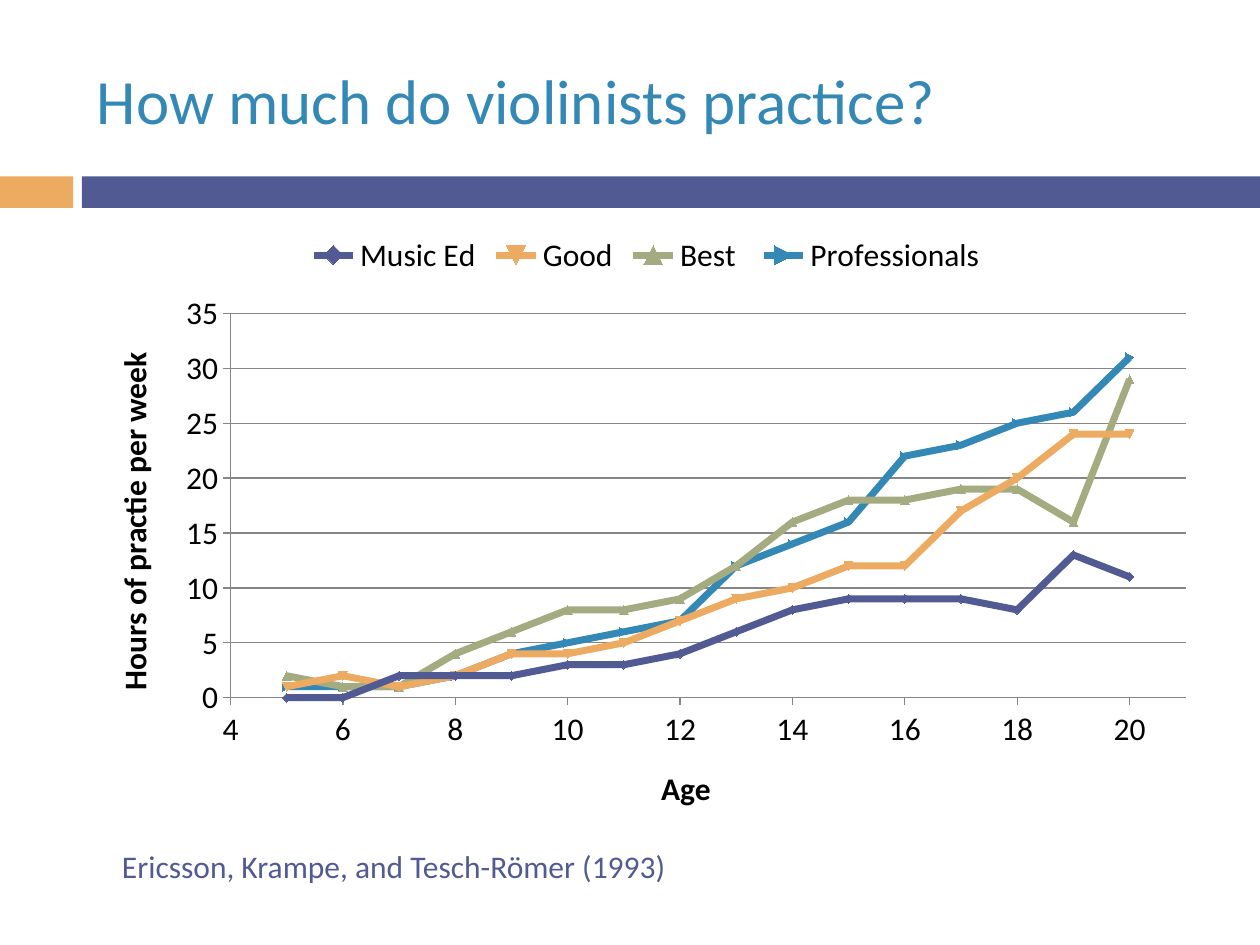
"""Build a slide charting weekly practice hours of violinists by age."""
from lxml import etree
from pptx import Presentation
from pptx.chart.data import XyChartData
from pptx.dml.color import RGBColor
from pptx.enum.chart import XL_CHART_TYPE, XL_LEGEND_POSITION, XL_MARKER_STYLE, XL_TICK_MARK
from pptx.enum.shapes import MSO_SHAPE
from pptx.enum.text import MSO_ANCHOR
from pptx.oxml.ns import qn
from pptx.util import Inches, Pt

FONT = "Calibri"
COLORS = {"navy": "525A93", "orange": "EDAA61", "sage": "A5AB81",
          "blue": "3488B6", "black": "000000", "gray": "868686"}
BARS = [("orange", 0, 0.58), ("navy", 0.65, 9.35)]
TEXTS = [
    ("How much do violinists practice?", (0.67, 0.25, 8.92, 1.08), 36, "blue", MSO_ANCHOR.MIDDLE),
    ("Ericsson, Krampe, and Tesch-Römer (1993)", (0.87, 6.67, 6.03, 0.4), 18, "navy", MSO_ANCHOR.TOP),
]
AGES = range(5, 21)
SERIES = [
    ("Music Ed", "navy", [0, 0, 2, 2, 2, 3, 3, 4, 6, 8, 9, 9, 9, 8, 13, 11]),
    ("Good", "orange", [1, 2, 1, 2, 4, 4, 5, 7, 9, 10, 12, 12, 17, 20, 24, 24]),
    ("Best ", "sage", [2, 1, 1, 4, 6, 8, 8, 9, 12, 16, 18, 18, 19, 19, 16, 29]),
    ("Professionals", "blue", [1, 1, 1, 2, 4, 5, 6, 7, 12, 14, 16, 22, 23, 25, 26, 31]),
]
PLOT = {"x": 0.13, "y": 0.15, "w": 0.85, "h": 0.62}


def color(name):
    return RGBColor.from_string(COLORS[name])


def style(font, size, tint, bold=False):
    font.name, font.size, font.bold = FONT, Pt(size), bold
    font.color.rgb = color(tint)


def add_bar(slide, tint, left, width):
    bar = slide.shapes.add_shape(MSO_SHAPE.RECTANGLE, Inches(left), Inches(1.4),
                                 Inches(width), Inches(0.25))
    bar.shadow.inherit = False
    bar.fill.solid()
    bar.fill.fore_color.rgb = color(tint)
    bar.line.fill.background()


def add_text(slide, text, box, size, tint, anchor):
    frame = slide.shapes.add_textbox(*map(Inches, box)).text_frame
    frame.word_wrap = True
    frame.vertical_anchor = anchor
    run = frame.paragraphs[0].add_run()
    run.text = text
    style(run.font, size, tint)


def set_axis(axis, title, low, high, step):
    axis.minimum_scale, axis.maximum_scale, axis.major_unit = low, high, step
    axis.major_tick_mark = XL_TICK_MARK.OUTSIDE
    axis.minor_tick_mark = XL_TICK_MARK.NONE
    axis.tick_labels.number_format = "0"
    axis.tick_labels.number_format_is_linked = False
    style(axis.tick_labels.font, 18, "black")
    axis.format.line.color.rgb = color("gray")
    run = axis.axis_title.text_frame.paragraphs[0].add_run()
    run.text = title
    style(run.font, 18, "black", True)


def set_plot(chart):
    area = chart.element.find(".//" + qn("c:plotArea"))
    for old in area.findall(qn("c:layout")):
        area.remove(old)
    layout = etree.Element(qn("c:layout"))
    area.insert(0, layout)
    manual = etree.SubElement(layout, qn("c:manualLayout"))
    modes = {"layoutTarget": "inner", "xMode": "edge", "yMode": "edge"}
    for tag, val in (modes | PLOT).items():
        etree.SubElement(manual, qn("c:" + tag)).set("val", str(val))


def add_graph(slide):
    data = XyChartData(number_format="0")
    for name, _, hours in SERIES:
        series = data.add_series(name)
        for age, hour in zip(AGES, hours):
            series.add_data_point(age, hour)
    box = map(Inches, (0.67, 1.75, 8.92, 4.92))
    chart = slide.shapes.add_chart(XL_CHART_TYPE.XY_SCATTER_LINES, *box, data).chart
    style(chart.font, 10, "black")
    chart.has_title = False
    chart.has_legend = True
    chart.legend.position = XL_LEGEND_POSITION.TOP
    chart.legend.include_in_layout = False
    style(chart.legend.font, 18, "black")
    set_axis(chart.category_axis, "Age", 4, 21, 2)
    set_axis(chart.value_axis, "Hours of practie per week", 0, 35, 5)
    chart.category_axis.has_major_gridlines = False
    chart.value_axis.has_major_gridlines = True
    chart.value_axis.major_gridlines.format.line.color.rgb = color("gray")
    plot = chart.plots[0]
    plot.vary_by_categories = False
    for series, (_, tint, _) in zip(plot.series, SERIES):
        series.smooth = False
        series.format.line.color.rgb = color(tint)
        series.format.line.width = Pt(4)
        mark = series.marker
        mark.style, mark.size = XL_MARKER_STYLE.AUTOMATIC, 5
        mark.format.fill.solid()
        mark.format.fill.fore_color.rgb = color(tint)
        mark.format.line.color.rgb = color(tint)
    set_plot(chart)


def main():
    deck = Presentation()
    deck.slide_width, deck.slide_height = Inches(10), Inches(7.5)
    slide = deck.slides.add_slide(deck.slide_layouts[6])
    for bar in BARS:
        add_bar(slide, *bar)
    add_graph(slide)
    for text in TEXTS:
        add_text(slide, *text)
    deck.save("out.pptx")


if __name__ == "__main__":
    main()
